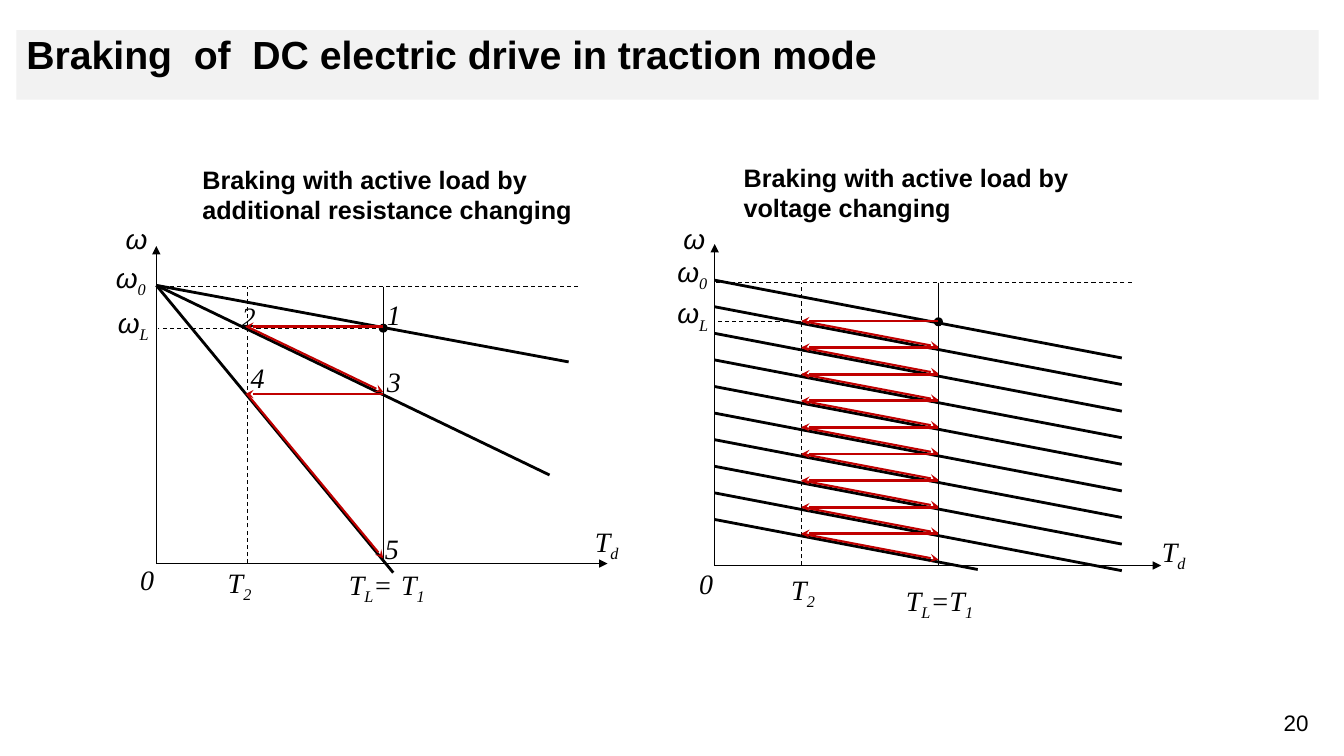
from pptx import Presentation
from pptx.dml.color import RGBColor as Rgb
from pptx.enum.dml import MSO_LINE_DASH_STYLE as Dash
from pptx.enum.shapes import MSO_CONNECTOR as Conn, MSO_SHAPE as Shape
from pptx.enum.text import MSO_ANCHOR as Anchor, MSO_AUTO_SIZE as Auto, PP_ALIGN as Align
from pptx.oxml.ns import qn
from pptx.util import Cm, Pt
from lxml.etree import SubElement

HUES = {"ink": "000000", "red": "C00000", "band": "F2F2F2"}
TITLE = {"name": "Arial", "size": Pt(28), "bold": True}
HEAD = {"name": "Arial", "size": Pt(18), "bold": True}
PAGE = {"name": "Arial", "size": Pt(16)}
MARK = {"name": "Times New Roman", "size": Pt(20), "italic": True}
LEFT = (3.94, 6.2, 11.37, 8)
RIGHT = (18.01, 6.15, 11.25, 8.1)


def hue(key):
    """Return the colour with the given name."""
    return Rgb.from_string(HUES[key])


def style(font, form):
    """Set the font attributes from a dict."""
    for key, val in form.items():
        setattr(font, key, val)
    font.color.rgb = hue("ink")


def write(slide, text, x, y, w, h, form):
    """Add a wrapped text box and return its paragraph."""
    frame = slide.shapes.add_textbox(Cm(x), Cm(y), Cm(w), Cm(h)).text_frame
    frame.word_wrap = True
    para = frame.paragraphs[0]
    if text:
        run = para.add_run()
        run.text = text
        style(run.font, form)
    return para


def label(slide, box, text, x, y, w=2.06):
    """Add an axis mark, with subscripts between underscores."""
    para = write(slide, "", box[0] + x, box[1] + y, w, 1.6, MARK)
    para.line_spacing, para.space_after = 1.15, Pt(10)
    for num, part in enumerate(text.split("_")):
        if not part:
            continue
        run = para.add_run()
        run.text = part
        style(run.font, MARK)
        if part == "ω":
            run.font.name = "Arial"
        if num % 2:
            run.font._element.set("baseline", "-25000")


def line(slide, box, start, end, width=0.75, key="ink", dash=False, tip=None):
    """Draw a line between two points given within the box."""
    x, y = box[:2]
    link = slide.shapes.add_connector(
        Conn.STRAIGHT, Cm(x + start[0]), Cm(y + start[1]), Cm(x + end[0]), Cm(y + end[1]))
    link.line.color.rgb = hue(key)
    link.line.width = Pt(width)
    if dash:
        link.line.dash_style = Dash.DASH
    props = link._element.spPr
    if tip:
        SubElement(props.find(qn("a:ln")), qn("a:tailEnd"), type=tip)
    SubElement(props, qn("a:effectLst"))


def arrow(slide, box, start, end, width):
    """Draw a red braking step."""
    line(slide, box, start, end, width, "red", tip="stealth")


def dot(slide, box, x, y):
    """Mark the working point centred at x, y."""
    side = 0.2
    spot = slide.shapes.add_shape(
        Shape.OVAL, Cm(box[0] + x - side / 2), Cm(box[1] + y - side / 2), Cm(side), Cm(side))
    spot.shadow.inherit = False
    spot.fill.solid()
    spot.fill.fore_color.rgb = hue("ink")
    spot.line.color.rgb = hue("ink")
    spot.line.width = Pt(0.75)


def axes(slide, box, near, load, top, work):
    """Draw both axes, the guide lines and the working point."""
    wide, high = box[2:]
    line(slide, box, (0, high), (0, 0), tip="triangle")
    line(slide, box, (0, high), (wide, high), tip="triangle")
    line(slide, box, (load, top), (load, high))
    line(slide, box, (near, high), (near, top), dash=True)
    line(slide, box, (wide - 0.74, top), (0.03, top), dash=True)
    line(slide, box, (load, work), (0.03, work), dash=True)
    dot(slide, box, load, work)


def resist(slide, box):
    """Build the chart of braking by added resistance."""
    near, load, top = 2.29, 5.72, 0.99
    write(slide, "Braking with active load by additional resistance changing",
          box[0] + 0.91, box[1] - 2.18, 9.96, 1.8, HEAD)
    marks = [("T_d", 10.8, 6.76), ("T_1", 5.92, 7.82), ("T_2", 1.55, 7.77),
             ("4", 2.13, 2.64), ("3", 5.56, 2.74), ("2", 1.9, 1.09), ("1", 5.56, 1.04),
             ("ω_L", -1.22, 1.24), ("T_L_=", 4.6, 7.82), ("ω", -1.02, -0.86),
             ("ω_0", -1.27, 0.1), ("0", -0.66, 7.72), ("5", 5.51, 6.93)]
    for mark in marks:
        label(slide, box, *mark)
    axes(slide, box, near, load, 1.02, 2.07)
    for end in [(10.39, 2.92), (9.91, 5.77), (5.97, 8.23)]:
        line(slide, box, (0, top), end, 2)
    for high, low in [(2.03, 3.68), (3.73, 7.87)]:
        arrow(slide, box, (near, high), (load, low), 1.5)
        arrow(slide, box, (load, high), (near - 0.05, high), 2)


def volts(slide, box):
    """Build the chart of braking by voltage steps."""
    near, load, step, count = 2.18, 5.64, 0.67, 10
    write(slide, "Braking with active load by voltage changing",
          box[0] + 0.48, box[1] - 2.18, 9.19, 1.8, HEAD)
    marks = [("T_d", 11.02, 7.04), ("T_2", 1.68, 8), ("ω_L", -1.19, 1.04),
             ("T_L_=T_1", 4.57, 8.28, 2.87), ("ω", -1.04, -0.81),
             ("ω_0", -1.19, 0), ("0", -0.64, 7.87)]
    for mark in marks:
        label(slide, box, *mark)
    axes(slide, box, near, load, 0.97, 1.96)
    for num in range(count):
        y = 0.91 + num * step
        run, drop = (10.26, 1.96) if num < count - 1 else (6.63, 1.26)
        line(slide, box, (0, y), (run, y + drop), 2)
    for num in range(count - 1):
        y = 1.94 + num * step
        arrow(slide, box, (load, y), (near, y), 2)
        arrow(slide, box, (near + 0.03, y), (load, y + 0.65), 1.5)


def banner(slide, box):
    """Place and format the title band."""
    title = slide.shapes.title
    for key, val in zip(("left", "top", "width", "height"), box):
        setattr(title, key, Cm(val))
    title.fill.solid()
    title.fill.fore_color.rgb = hue("band")
    frame = title.text_frame
    frame.text = "Braking  of  DC electric drive in traction mode"
    frame.word_wrap, frame.auto_size = True, Auto.NONE
    frame.vertical_anchor = Anchor.TOP
    para = frame.paragraphs[0]
    para.alignment, para.line_spacing = Align.LEFT, 0.9
    style(para.runs[0].font, TITLE)


def main():
    """Build and save the slide."""
    deck = Presentation()
    deck.slide_width, deck.slide_height = Cm(33.87), Cm(19.05)
    slide = deck.slides.add_slide(deck.slide_layouts[5])
    banner(slide, (0.41, 0.76, 32.82, 1.75))
    resist(slide, LEFT)
    volts(slide, RIGHT)
    write(slide, "20", 31.85, 17.75, 1.63, 0.94, PAGE).alignment = Align.CENTER
    deck.save("out.pptx")


if __name__ == "__main__":
    main()
